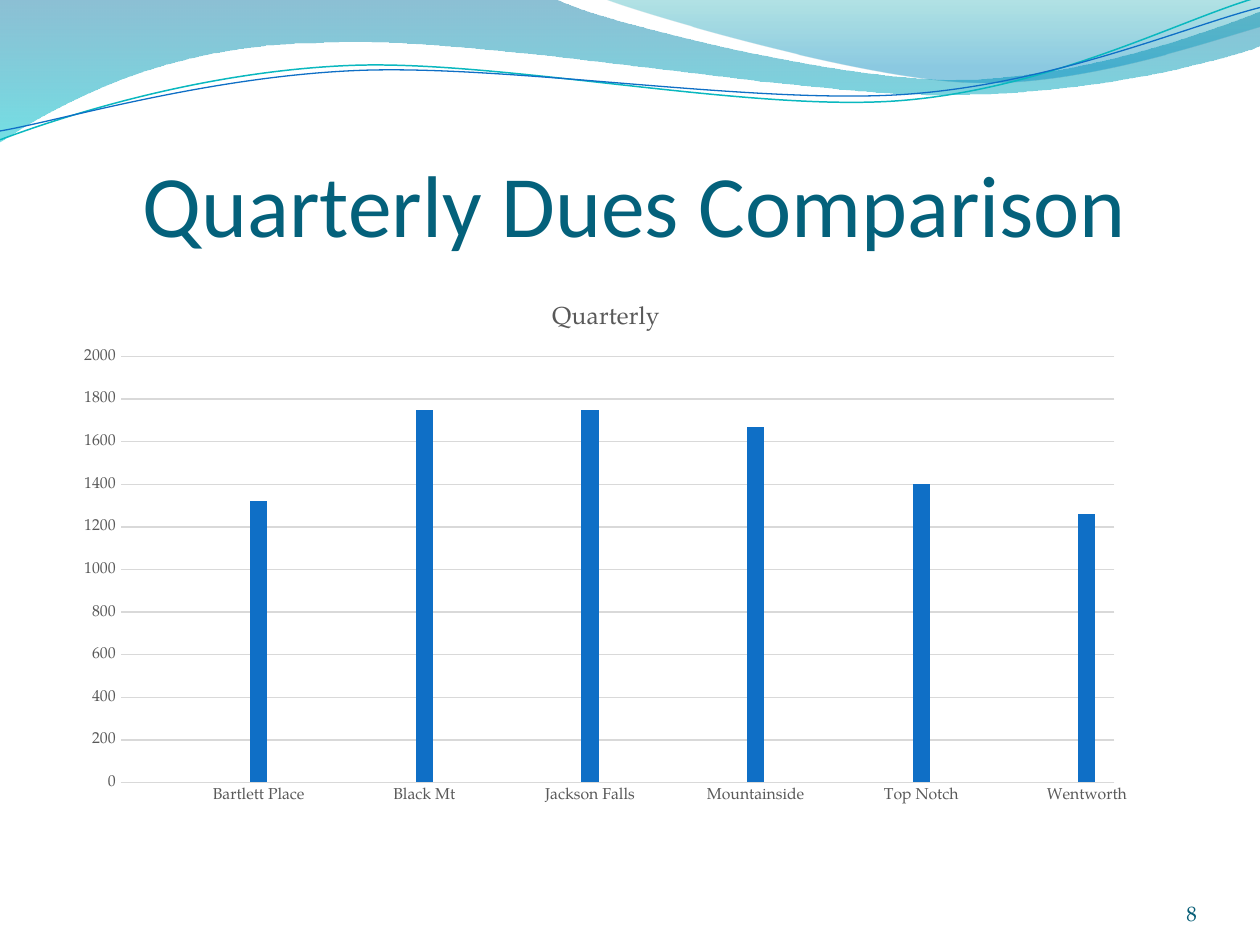
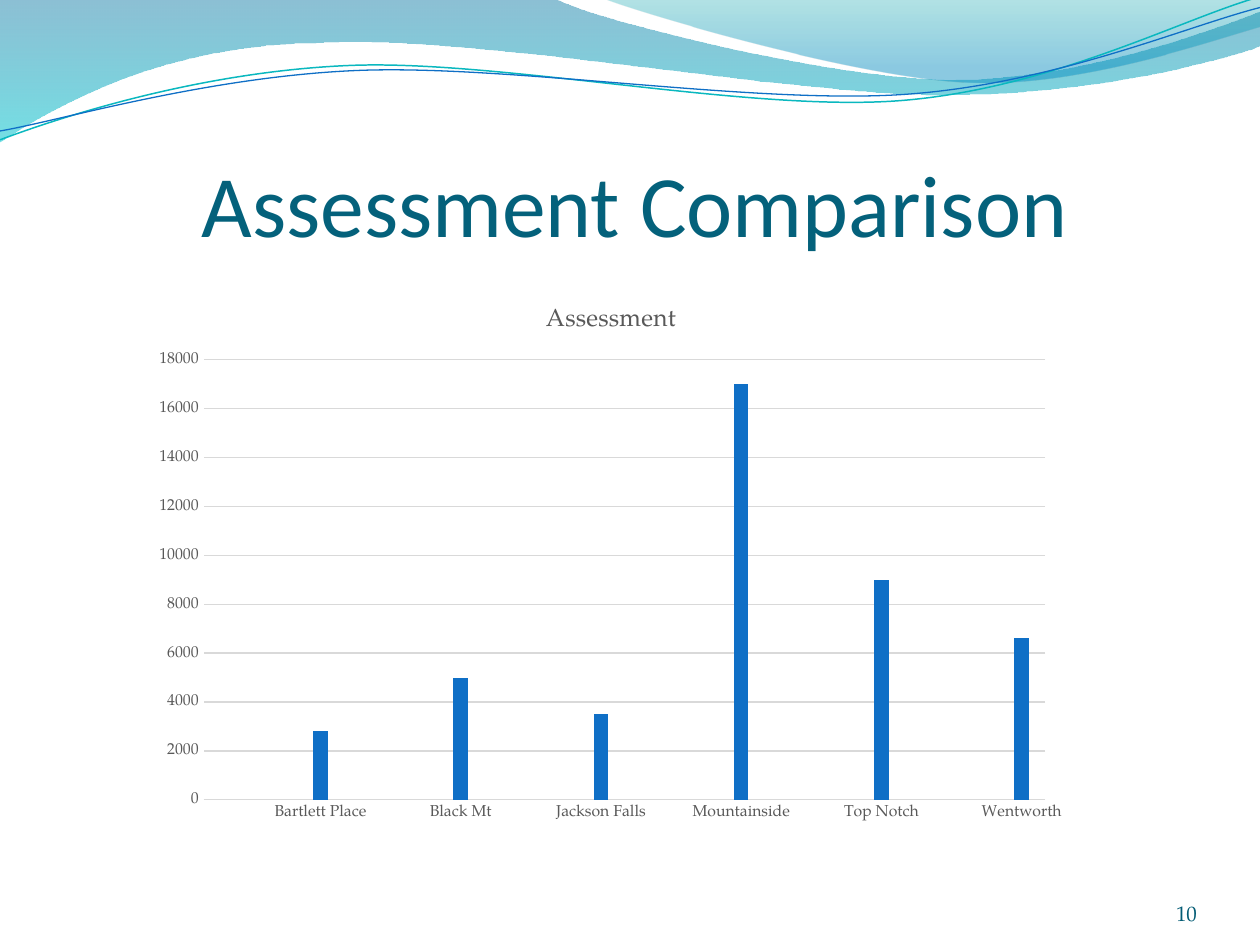
from dataclasses import dataclass
from math import cos, radians, sin

from lxml.etree import SubElement
from pptx import Presentation
from pptx.chart.data import CategoryChartData
from pptx.dml.color import RGBColor
from pptx.enum.chart import XL_CHART_TYPE, XL_TICK_MARK
from pptx.enum.text import MSO_ANCHOR, PP_ALIGN
from pptx.oxml.ns import qn
from pptx.util import Inches, Pt


@dataclass(frozen=True)
class Theme:
    title_font: str = "Calibri"
    body_font: str = "TeX Gyre Pagella"
    title_color: str = "04617B"
    page_color: str = "045C75"
    chart_text: str = "595959"
    grid: str = "D9D9D9"
    bar: str = "0F6FC6"
    title_size: float = 50
    page_size: float = 12
    chart_title_size: float = 14
    chart_size: float = 10
    axis_size: float = 9
    hairline: float = 0.75


THEME = Theme()
RIPPLE_TILT = 357.3
ASSOCIATIONS = ["Bartlett Place", "Black Mt", "Jackson Falls",
                "Mountainside", "Top Notch", "Wentworth"]

BANDS = [
    ([(0, -0.01), (4.4, -0.01),
      (4.76, 0.17, 6.64, 0.63, 7.58, 0.63),
      (8.53, 0.63, 9.58, 0.26, 10, 0.09),
      (10.01, 0.36),
      (9.83, 0.44, 8.7, 0.76, 7.46, 0.75),
      (6.22, 0.75, 3.82, 0.28, 2.57, 0.34),
      (1.29, 0.35, 0.46, 0.83, -0.01, 1.13),
      (0, -0.01)],
     [(0, "0074A1", 45), (1, "00C6CF", 55)]),
    ([(4.79, -0.01),
      (5.09, 0.11, 6.82, 0.62, 7.69, 0.65),
      (8.56, 0.69, 9.61, 0.32, 10, 0.21),
      (10, 0), (4.79, -0.01)],
     [(0, "00A1A9", 30), (0.8, "008BBF", 45)]),
]
RIPPLES = [
    ([(0, 1.11),
      (0.48, 0.93, 1.58, 0.57, 2.77, 0.52),
      (3.95, 0.47, 5.93, 0.89, 7.13, 0.8),
      (8.33, 0.71, 9.38, 0.15, 9.98, -0.02)], (4.99, 0.57), "0AB8BF", 0.85),
    ([(0, 1.04),
      (0.47, 0.96, 1.64, 0.61, 2.83, 0.56),
      (4.03, 0.51, 5.97, 0.83, 7.17, 0.75),
      (8.36, 0.67, 9.41, 0.21, 10, 0.06)], (5, 0.59), "0F6FC6", 0.75),
]


def rgb(color):
    return RGBColor.from_string(color)


def style_font(font, name, size, color):
    font.name = name
    font.size = Pt(size)
    font.bold = False
    font.color.rgb = rgb(color)


def style_line(line, color, width):
    line.color.rgb = rgb(color)
    line.width = Pt(width)


def pairs(segment):
    return list(zip(segment[::2], segment[1::2]))


def level(segment, center):
    angle = radians(-RIPPLE_TILT)
    turned = []
    for x, y in pairs(segment):
        dx, dy = x - center[0], y - center[1]
        turned += [center[0] + dx * cos(angle) - dy * sin(angle),
                   center[1] + dx * sin(angle) + dy * cos(angle)]
    return tuple(turned)


def add_outline(slide, segments, close):
    corners = [(Inches(s[-2]), Inches(s[-1])) for s in segments]
    builder = slide.shapes.build_freeform(*corners[0])
    builder.add_line_segments(corners[1:], close=close)
    outline = builder.convert_to_shape()
    outline.shadow.inherit = False
    edges = list(outline.element.spPr.iter(qn("a:lnTo")))
    for edge, segment in zip(edges, segments[1:]):
        if len(segment) == 6:
            bend_edge(outline, edge, segment)
    return outline


def bend_edge(outline, edge, segment):
    curve = SubElement(edge.getparent(), qn("a:cubicBezTo"))
    for x, y in pairs(segment):
        SubElement(curve, qn("a:pt"), x=str(Inches(x) - outline.left),
                   y=str(Inches(y) - outline.top))
    edge.getparent().replace(edge, curve)


def add_band(slide, segments, stops):
    band = add_outline(slide, segments, close=True)
    band.line.fill.background()
    band.fill.gradient()
    band.fill.gradient_angle = 270
    for stop, (position, color, _) in zip(band.fill.gradient_stops, stops):
        stop.position = position
        stop.color.rgb = rgb(color)
    colors = band.element.spPr.iter(qn("a:srgbClr"))
    for color, (_, _, opacity) in zip(list(colors), stops):
        SubElement(color, qn("a:alpha"), val=str(opacity * 1000))


def add_ripple(slide, segments, center, color, width):
    ripple = add_outline(slide, [level(s, center) for s in segments], close=False)
    ripple.rotation = RIPPLE_TILT
    ripple.fill.background()
    style_line(ripple.line, color, width)


def add_waves(slide):
    for band in BANDS:
        add_band(slide, *band)
    for ripple in RIPPLES:
        add_ripple(slide, *ripple)


def add_label(slide, text, place, align, font, inset_top=0):
    box = slide.shapes.add_textbox(*map(Inches, place))
    frame = box.text_frame
    frame.word_wrap = True
    frame.vertical_anchor = MSO_ANCHOR.BOTTOM
    frame.margin_left = frame.margin_right = frame.margin_bottom = 0
    frame.margin_top = Inches(inset_top)
    frame.text = text
    paragraph = frame.paragraphs[0]
    paragraph.alignment = align
    style_font(paragraph.runs[0].font, *font)


def style_axis(axis):
    axis.major_tick_mark = axis.minor_tick_mark = XL_TICK_MARK.NONE
    style_font(axis.tick_labels.font, THEME.body_font, THEME.axis_size, THEME.chart_text)


def add_dues_chart(slide, heading, series_name, amounts, place):
    data = CategoryChartData()
    data.categories = [label for name in ASSOCIATIONS for label in ("", "", name)]
    data.add_series(series_name, [v for amount in amounts for v in (None, None, amount)])
    chart = slide.shapes.add_chart(
        XL_CHART_TYPE.COLUMN_CLUSTERED, *map(Inches, place), data).chart
    style_font(chart.font, THEME.body_font, THEME.chart_size, "000000")
    chart.has_legend = False

    chart.has_title = True
    chart.chart_title.include_in_layout = False
    title = chart.chart_title.text_frame
    title.text = heading
    style_font(title.paragraphs[0].runs[0].font, THEME.body_font,
               THEME.chart_title_size, THEME.chart_text)

    names, scale = chart.category_axis, chart.value_axis
    style_axis(names)
    style_axis(scale)
    style_line(names.format.line, THEME.grid, THEME.hairline)
    names._element.txPr.find(qn("a:bodyPr")).set("rot", "-60000000")
    scale.format.line.fill.background()
    scale.has_major_gridlines = True
    style_line(scale.major_gridlines.format.line, THEME.grid, THEME.hairline)

    plot = chart.plots[0]
    plot.vary_by_categories = False
    plot.gap_width = 219
    plot.overlap = -27
    bars = plot.series[0].format.fill
    bars.solid()
    bars.fore_color.rgb = rgb(THEME.bar)


def add_comparison_slide(deck, title, page, **chart):
    slide = deck.slides.add_slide(deck.slide_layouts[6])
    add_waves(slide)
    add_label(slide, title, (0.5, 0.77, 9.08, 1.25), PP_ALIGN.CENTER,
              (THEME.title_font, THEME.title_size, THEME.title_color), inset_top=0.05)
    add_dues_chart(slide, **chart)
    add_label(slide, page, (8.67, 6.95, 0.83, 0.4), PP_ALIGN.RIGHT,
              (THEME.body_font, THEME.page_size, THEME.page_color))


def main():
    deck = Presentation()
    deck.slide_width, deck.slide_height = Inches(10), Inches(7.5)
    add_comparison_slide(
        deck, "Quarterly Dues Comparison", "8",
        heading="Quarterly", series_name="QuarterlyDues",
        amounts=[1320, 1750, 1750, 1670, 1400, 1260],
        place=(0.5, 2.23, 8.62, 4.23))
    add_comparison_slide(
        deck, "Assessment Comparison", "10",
        heading="Assessment", series_name="Assessment",
        amounts=[2800, 5000, 3500, 17000, 9000, 6600],
        place=(1.12, 2.25, 7.46, 4.35))
    deck.save("out.pptx")


if __name__ == "__main__":
    main()
